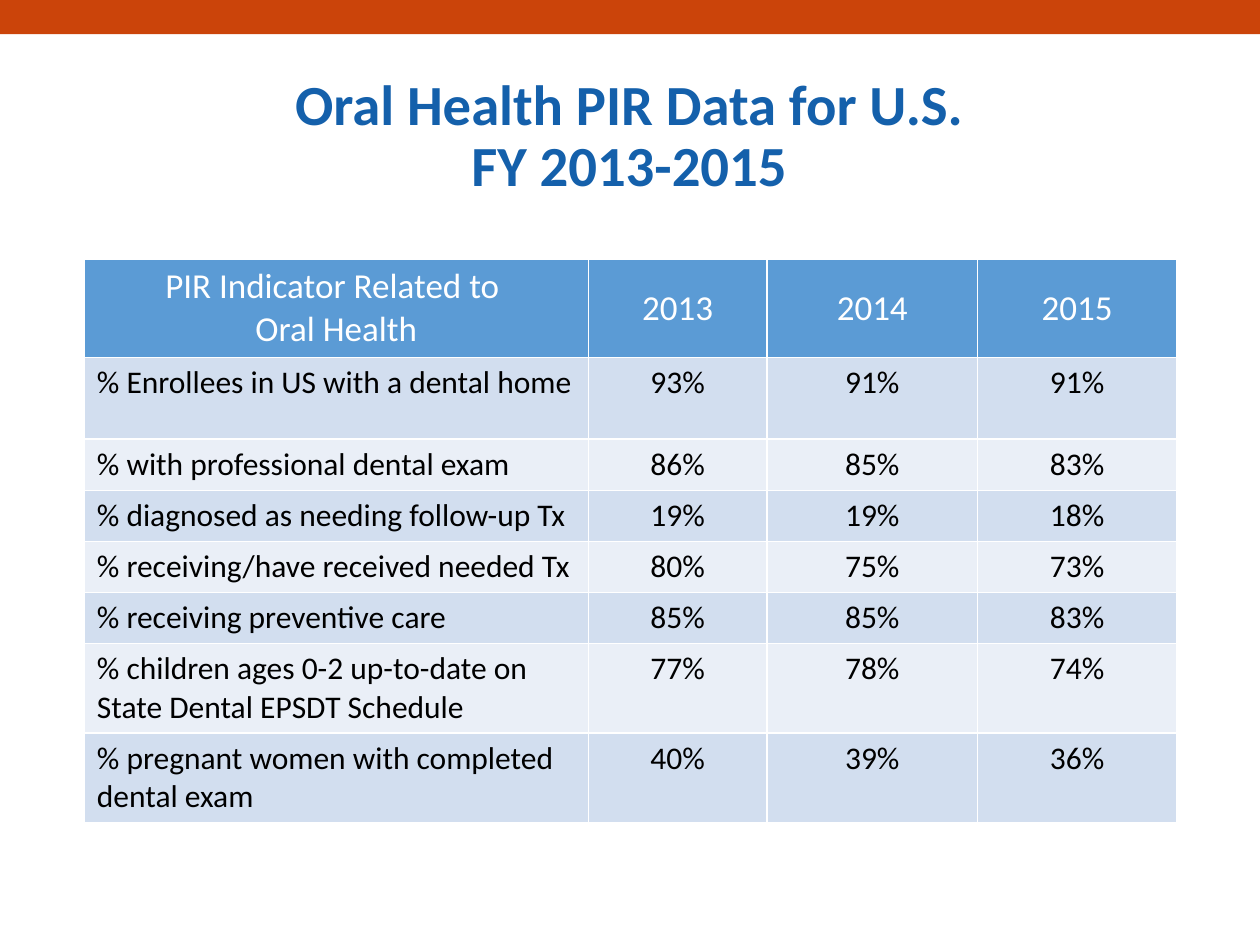
from pptx import Presentation
from pptx.dml.color import RGBColor
from pptx.enum.shapes import MSO_SHAPE
from pptx.enum.text import MSO_ANCHOR, MSO_AUTO_SIZE, PP_ALIGN
from pptx.util import Cm, Pt

TITLE = "Oral Health PIR Data for U.S.\vFY 2013-2015"
ROWS = [
    ("PIR Indicator Related to \nOral Health", "2013", "2014", "2015"),
    ("% Enrollees in US with a dental home", "93%", "91%", "91%"),
    ("% with professional dental exam", "86%", "85%", "83%"),
    ("% diagnosed as needing follow-up Tx", "19%", "19%", "18%"),
    ("% receiving/have received needed Tx", "80%", "75%", "73%"),
    ("% receiving preventive care", "85%", "85%", "83%"),
    ("% children ages 0-2 up-to-date on State Dental EPSDT Schedule", "77%", "78%", "74%"),
    ("% pregnant women with completed dental exam", "40%", "39%", "36%"),
]
COL_WIDTHS = [10.16, 3.6, 4.25, 4.01]
ROW_HEIGHTS = [1.97, 1.65] + [1.03] * 4 + [1.8] * 2
HEADER_FILL = "5B9BD5"
BAND_FILLS = ["EAEFF7", "D2DEEF"]


def rgb(value):
    return RGBColor.from_string(value)


def style(p, size, color, align, bold=False):
    p.alignment = align
    p.font.name = "Calibri"
    p.font.size = Pt(size)
    p.font.bold = bold
    p.font.color.rgb = rgb(color)


def add_bar(s):
    bar = s.shapes.add_shape(MSO_SHAPE.RECTANGLE, 0, 0, Cm(25.4), Cm(0.69))
    bar.shadow.inherit = False
    bar.fill.solid()
    bar.fill.fore_color.rgb = rgb("CB440A")
    bar.line.fill.background()


def set_title(s):
    sp = s.shapes.title
    sp.left, sp.top, sp.width, sp.height = Cm(-0.03), Cm(1.4), Cm(25.43), Cm(2.74)
    tf = sp.text_frame
    tf.auto_size = MSO_AUTO_SIZE.NONE
    tf.vertical_anchor = MSO_ANCHOR.MIDDLE
    tf.text = TITLE
    p = tf.paragraphs[0]
    p.line_spacing = 0.9
    style(p, 32.4, "1460AB", PP_ALIGN.CENTER, bold=True)


def add_data_table(s):
    table = s.shapes.add_table(len(ROWS), len(COL_WIDTHS), Cm(1.7), Cm(5.22),
                               Cm(sum(COL_WIDTHS)), Cm(sum(ROW_HEIGHTS))).table
    for column, width in zip(table.columns, COL_WIDTHS):
        column.width = Cm(width)
    for i, (row, height) in enumerate(zip(ROWS, ROW_HEIGHTS)):
        table.rows[i].height = Cm(height)
        header = i == 0
        for j, text in enumerate(row):
            cell = table.cell(i, j)
            cell.text = text
            cell.vertical_anchor = MSO_ANCHOR.MIDDLE if header else MSO_ANCHOR.TOP
            cell.fill.solid()
            cell.fill.fore_color.rgb = rgb(HEADER_FILL if header else BAND_FILLS[i % 2])
            align = PP_ALIGN.CENTER if header or j else PP_ALIGN.LEFT
            for p in cell.text_frame.paragraphs:
                style(p, 20 if header else 18, "FFFFFF" if header else "000000", align)


def main():
    prs = Presentation()
    prs.slide_width, prs.slide_height = Cm(25.4), Cm(19.05)
    s = prs.slides.add_slide(prs.slide_layouts[5])
    add_bar(s)
    set_title(s)
    add_data_table(s)
    prs.save("out.pptx")


if __name__ == "__main__":
    main()
